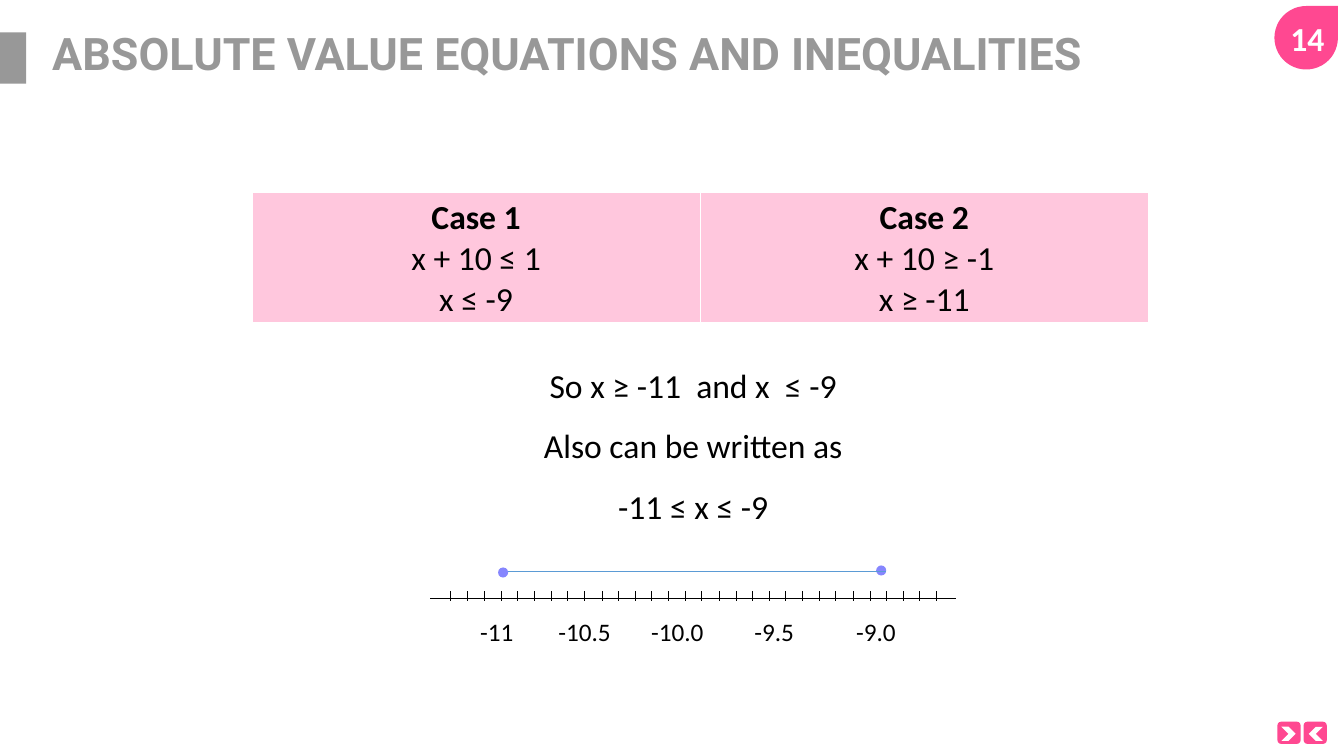
from typing import NamedTuple

from lxml import etree
from pptx import Presentation
from pptx import util as u
from pptx.dml.color import RGBColor
from pptx.enum import shapes, text
from pptx.oxml.ns import qn

PX = 9144  # EMU per px, 100 px to the inch
PINK, GREY, WHITE, BLACK = "FF4891", "989898", "FFFFFF", "000000"
VIOLET, BLUE = "8686FE", "5B9BD5"
CENTER = text.PP_ALIGN.CENTER
Geometry = shapes.MSO_SHAPE


class Box(NamedTuple):
    left: int
    top: int
    width: int
    height: int

    def emu(self) -> list[int]:
        return [length * PX for length in self]


class Figure(NamedTuple):
    geometry: Geometry
    box: Box
    color: str
    rotation: int = 0


class Case(NamedTuple):
    title: str
    steps: list[str]


class AxisLabel(NamedTuple):
    value: str
    center: int


DECORATION = [
    Figure(Geometry.RECTANGLE, Box(0, 32, 26, 51), GREY),
    Figure(Geometry.TEAR, Box(1264, 6, 63, 63), PINK),
    Figure(Geometry.ROUNDED_RECTANGLE, Box(1267, 716, 23, 22), PINK),
    Figure(Geometry.ROUNDED_RECTANGLE, Box(1293, 716, 23, 22), PINK),
    Figure(Geometry.CHEVRON, Box(1271, 721, 14, 14), WHITE),
    Figure(Geometry.CHEVRON, Box(1298, 721, 14, 14), WHITE, 180),
]
CASES = [
    Case("Case 1", ["x + 10 ≤ 1", "x ≤ -9"]),
    Case("Case 2", ["x + 10 ≥ -1", "x ≥ -11"]),
]
CONCLUSION = ["So x ≥ -11  and x  ≤ -9", "Also can be written as", "-11 ≤ x ≤ -9"]
AXIS_LABELS = [
    AxisLabel("-11", 50),
    AxisLabel("-10.5", 137),
    AxisLabel("-10.0", 229),
    AxisLabel("-9.5", 325),
    AxisLabel("-9.0", 426),
]
TICK_COUNT, FIRST_TICK, LAST_TICK = 30, 447, 929


def rgb(color: str) -> RGBColor:
    return RGBColor.from_string(color)


def write(paragraph, words: str, *, size=24, font="Calibri", color=BLACK,
          bold=False, align=None, spacing=None) -> None:
    run = paragraph.add_run()
    run.text = words
    run.font.size, run.font.name, run.font.bold = u.Pt(size), font, bold
    run.font.color.rgb = rgb(color)
    paragraph.alignment = align
    paragraph.line_spacing = spacing


def next_paragraph(frame, index: int):
    return frame.add_paragraph() if index else frame.paragraphs[0]


def add_text(parent, box: Box, lines: list[str], *,
             anchor=text.MSO_ANCHOR.TOP, **style):
    frame = parent.shapes.add_textbox(*box.emu()).text_frame
    frame.word_wrap = True
    frame.vertical_anchor = anchor
    for index, line in enumerate(lines):
        write(next_paragraph(frame, index), line, **style)
    return frame


def add_figure(parent, figure: Figure) -> None:
    shape = parent.shapes.add_shape(figure.geometry, *figure.box.emu())
    shape.shadow.inherit = False
    shape.fill.solid()
    shape.fill.fore_color.rgb = rgb(figure.color)
    shape.line.fill.background()
    shape.rotation = figure.rotation


def add_line(parent, x1: int, y1: int, x2: int, y2: int, color=BLACK) -> None:
    line = parent.shapes.add_connector(
        shapes.MSO_CONNECTOR.STRAIGHT, x1 * PX, y1 * PX, x2 * PX, y2 * PX)
    line.line.color.rgb = rgb(color)
    line.line.width = u.Pt(0.5)
    etree.SubElement(line._element.spPr, qn("a:effectLst"))


def style_cell(cell) -> None:
    """Give the cell white borders, thicker below, and a 30 % pink fill."""
    properties = cell._tc.get_or_add_tcPr()
    for side, points in {"L": 1, "R": 1, "T": 1, "B": 3}.items():
        border = etree.SubElement(properties, qn(f"a:ln{side}"), w=str(u.Pt(points)))
        paint = etree.SubElement(border, qn("a:solidFill"))
        etree.SubElement(paint, qn("a:srgbClr"), val=WHITE)
    cell.fill.solid()
    cell.fill.fore_color.rgb = rgb(PINK)
    tint = properties.find(qn("a:solidFill")).find(qn("a:srgbClr"))
    etree.SubElement(tint, qn("a:alpha"), val="30000")


def add_cases(slide) -> None:
    box = Box(250, 191, 889, 130)
    table = slide.shapes.add_table(1, len(CASES), *box.emu()).table
    table.first_row = table.horz_banding = False
    for column, case in enumerate(CASES):
        cell = table.cell(0, column)
        style_cell(cell)
        cell.margin_bottom = 0
        for index, line in enumerate([case.title, *case.steps]):
            write(next_paragraph(cell.text_frame, index), line,
                  bold=index == 0, align=CENTER)


def add_axis_labels(parent) -> None:
    """Write all labels in one line, each centred on its tab stop."""
    frame = add_text(parent, Box(433, 607, 516, 40), [])
    paragraph = frame.paragraphs[0]
    stops = etree.SubElement(paragraph._p.get_or_add_pPr(), qn("a:tabLst"))
    for label in AXIS_LABELS:
        etree.SubElement(stops, qn("a:tab"), pos=str(label.center * PX), algn="ctr")
    write(paragraph, "".join(f"\t{label.value}" for label in AXIS_LABELS), size=18)


def add_number_line(slide) -> None:
    number_line = slide.shapes.add_group_shape()
    add_line(number_line, 427, 594, 948, 594)
    step = (LAST_TICK - FIRST_TICK) / (TICK_COUNT - 1)
    for index in range(TICK_COUNT):
        x = round(FIRST_TICK + index * step)
        add_line(number_line, x, 596, x, 586)
    add_axis_labels(number_line)
    add_figure(number_line, Figure(Geometry.OVAL, Box(869, 561, 10, 10), VIOLET))
    add_line(number_line, 497, 567, 879, 567, BLUE)
    add_figure(number_line, Figure(Geometry.OVAL, Box(494, 563, 10, 10), VIOLET))


def main() -> None:
    deck = Presentation()
    deck.slide_width, deck.slide_height = 1333 * PX, 750 * PX
    slide = deck.slides.add_slide(deck.slide_layouts[6])
    for figure in DECORATION:
        add_figure(slide, figure)
    add_text(slide, Box(42, 35, 1150, 42),
             ["ABSOLUTE VALUE EQUATIONS AND INEQUALITIES"], size=32, font="Roboto",
             color=GREY, bold=True, spacing=0.9, anchor=text.MSO_ANCHOR.MIDDLE)
    add_text(slide, Box(1270, 13, 60, 50), ["14"], color=WHITE, bold=True)
    add_cases(slide)
    add_text(slide, Box(354, 337, 667, 186), CONCLUSION, align=CENTER, spacing=1.5)
    add_number_line(slide)
    deck.save("out.pptx")


if __name__ == "__main__":
    main()
